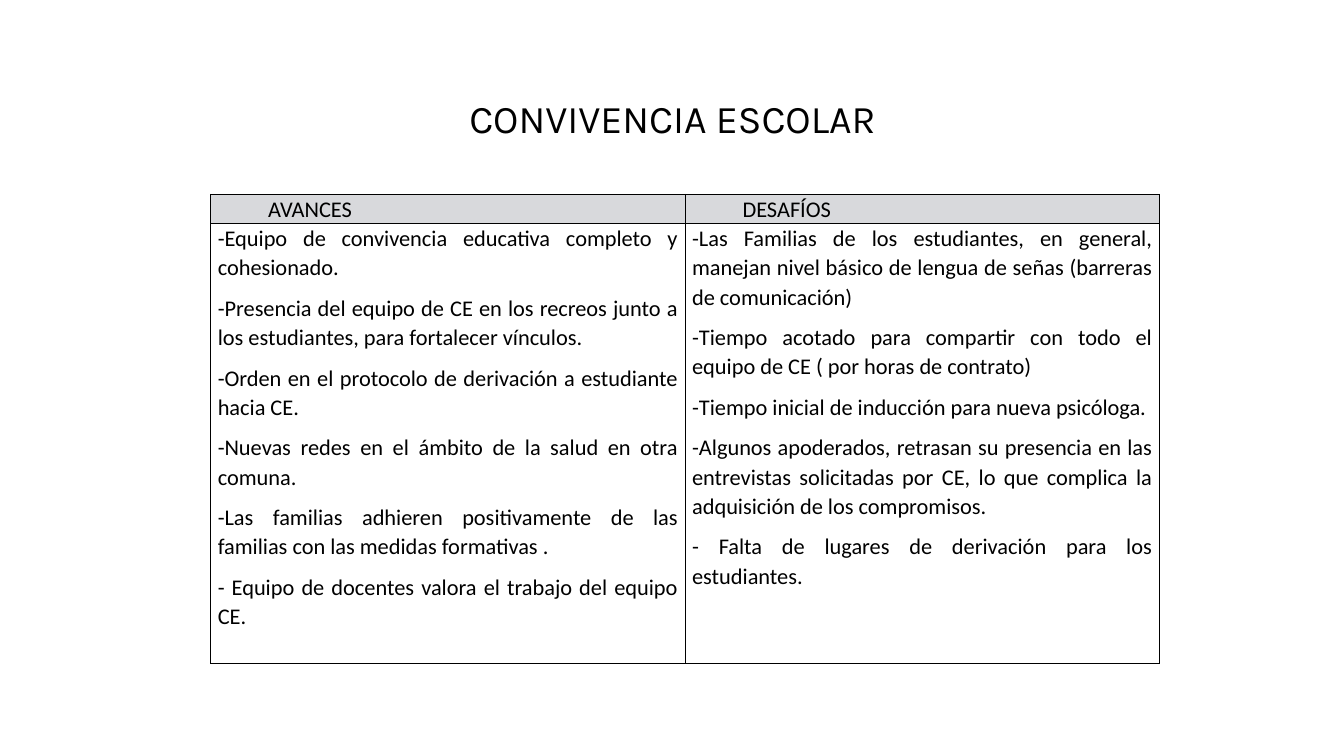
from dataclasses import dataclass

from lxml.etree import SubElement
from pptx import Presentation
from pptx.dml.color import RGBColor
from pptx.enum.text import MSO_ANCHOR, PP_ALIGN
from pptx.oxml.ns import qn
from pptx.slide import Slide
from pptx.table import _Cell
from pptx.text.text import _Paragraph
from pptx.util import Inches, Pt


@dataclass(frozen=True)
class Theme:
    ink: str = "000000"
    header_fill: str = "D8D9DC"
    title_font: str = "Karla"
    body_font: str = "Calibri"
    title_size: int = 28
    body_size: int = 16
    border_width: int = 1


@dataclass(frozen=True)
class Area:
    """A rectangle in shares of the slide's width and height."""
    left: float
    top: float
    width: float
    height: float

    def lengths(self) -> tuple[int, int, int, int]:
        return (int(self.left * SLIDE_WIDTH), int(self.top * SLIDE_HEIGHT),
                int(self.width * SLIDE_WIDTH), int(self.height * SLIDE_HEIGHT))


@dataclass(frozen=True)
class Topic:
    heading: str
    points: tuple[str, ...]


THEME = Theme()
SLIDE_WIDTH, SLIDE_HEIGHT = Inches(13.33), Inches(7.5)
TITLE_AREA = Area(0.2123, 0.1187, 0.5761, 0.076)
TABLE_AREA = Area(0.1568, 0.2573, 0.7059, 0.62)
HEADER_SHARE = 0.06
HEADING_INDENT = Inches(0.5)

CELL_FORMAT = {
    "margin_left": Inches(0.07), "margin_right": Inches(0.07),
    "margin_top": 0, "margin_bottom": 0, "vertical_anchor": MSO_ANCHOR.TOP,
}
PARAGRAPH_FORMAT = {
    "alignment": PP_ALIGN.JUSTIFY, "line_spacing": 1.07, "space_after": Pt(8),
}

TOPICS = (
    Topic("AVANCES", (
        "-Equipo de convivencia educativa completo y cohesionado.",
        "-Presencia del equipo de CE en los recreos junto a los estudiantes, "
        "para fortalecer vínculos.",
        "-Orden en el protocolo de derivación a estudiante hacia CE.",
        "-Nuevas redes en el ámbito de la salud en otra comuna.",
        "-Las familias adhieren positivamente de las familias con las medidas "
        "formativas .",
        "- Equipo de docentes valora el trabajo del equipo CE.",
    )),
    Topic("DESAFÍOS", (
        "-Las Familias de los estudiantes, en general, manejan nivel básico de "
        "lengua de señas (barreras de comunicación)",
        "-Tiempo acotado para compartir con todo el equipo de CE "
        "( por horas de contrato)",
        "-Tiempo inicial de inducción para nueva psicóloga.",
        "-Algunos apoderados, retrasan su presencia en las entrevistas "
        "solicitadas por CE, lo que complica la adquisición de los compromisos.",
        "- Falta de lugares de derivación para los estudiantes.",
    )),
)


def apply_format(target: object, values: dict) -> None:
    for attribute, value in values.items():
        setattr(target, attribute, value)


def write(paragraph: _Paragraph, words: str, font: str, size: int) -> None:
    run = paragraph.add_run()
    run.text = words
    apply_format(run.font, {"name": font, "size": Pt(size)})
    run.font.color.rgb = RGBColor.from_string(THEME.ink)


def add_borders(cell: _Cell) -> None:
    properties = cell._tc.get_or_add_tcPr()
    for position, side in enumerate(("lnL", "lnR", "lnT", "lnB")):
        border = SubElement(properties, qn(f"a:{side}"),
                            w=str(Pt(THEME.border_width)))
        SubElement(SubElement(border, qn("a:solidFill")),
                   qn("a:srgbClr"), val=THEME.ink)
        properties.insert(position, border)


def fill_cell(cell: _Cell, lines: tuple[str, ...], indent: int = 0) -> None:
    apply_format(cell, CELL_FORMAT)
    for position, line in enumerate(lines):
        frame = cell.text_frame
        paragraph = frame.add_paragraph() if position else frame.paragraphs[0]
        apply_format(paragraph, PARAGRAPH_FORMAT)
        paragraph._p.get_or_add_pPr().set("marL", str(indent))
        write(paragraph, line, THEME.body_font, THEME.body_size)
    add_borders(cell)


def add_title(slide: Slide, words: str) -> None:
    frame = slide.shapes.add_textbox(*TITLE_AREA.lengths()).text_frame
    frame.word_wrap = True
    frame.paragraphs[0].alignment = PP_ALIGN.CENTER
    write(frame.paragraphs[0], words, THEME.title_font, THEME.title_size)


def add_topics(slide: Slide, topics: tuple[Topic, ...]) -> None:
    area = TABLE_AREA.lengths()
    table = slide.shapes.add_table(2, len(topics), *area).table
    apply_format(table, {"first_row": False, "horz_banding": False})
    table.rows[0].height = int(area[3] * HEADER_SHARE)
    table.rows[1].height = area[3] - table.rows[0].height
    for column, topic in enumerate(topics):
        heading, points = table.cell(0, column), table.cell(1, column)
        heading.fill.solid()
        heading.fill.fore_color.rgb = RGBColor.from_string(THEME.header_fill)
        points.fill.background()
        fill_cell(heading, (topic.heading,), HEADING_INDENT)
        fill_cell(points, topic.points)


def main() -> None:
    presentation = Presentation()
    apply_format(presentation, {"slide_width": SLIDE_WIDTH,
                                "slide_height": SLIDE_HEIGHT})
    slide = presentation.slides.add_slide(presentation.slide_layouts[6])
    add_title(slide, "CONVIVENCIA ESCOLAR")
    add_topics(slide, TOPICS)
    presentation.save("out.pptx")


if __name__ == "__main__":
    main()
